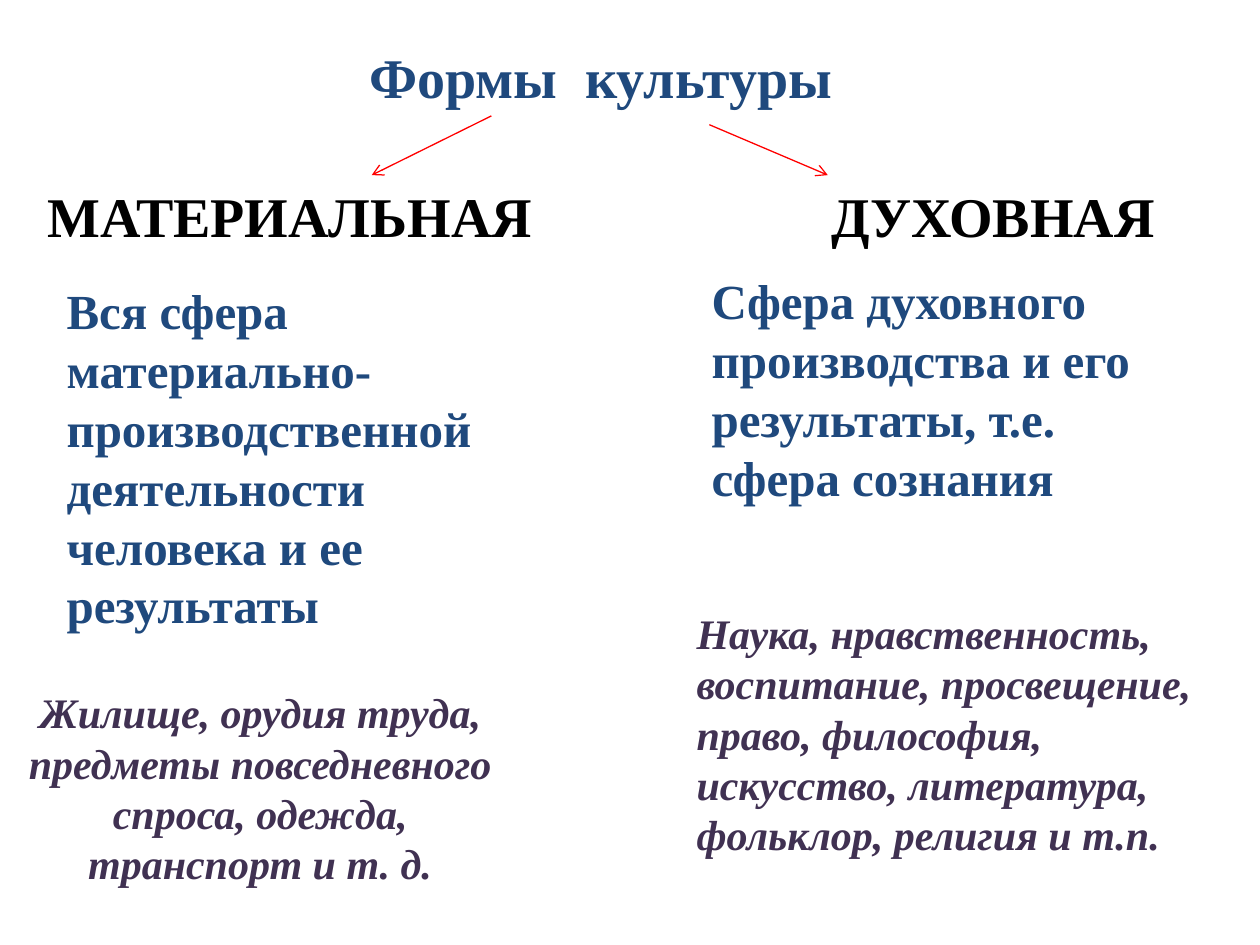
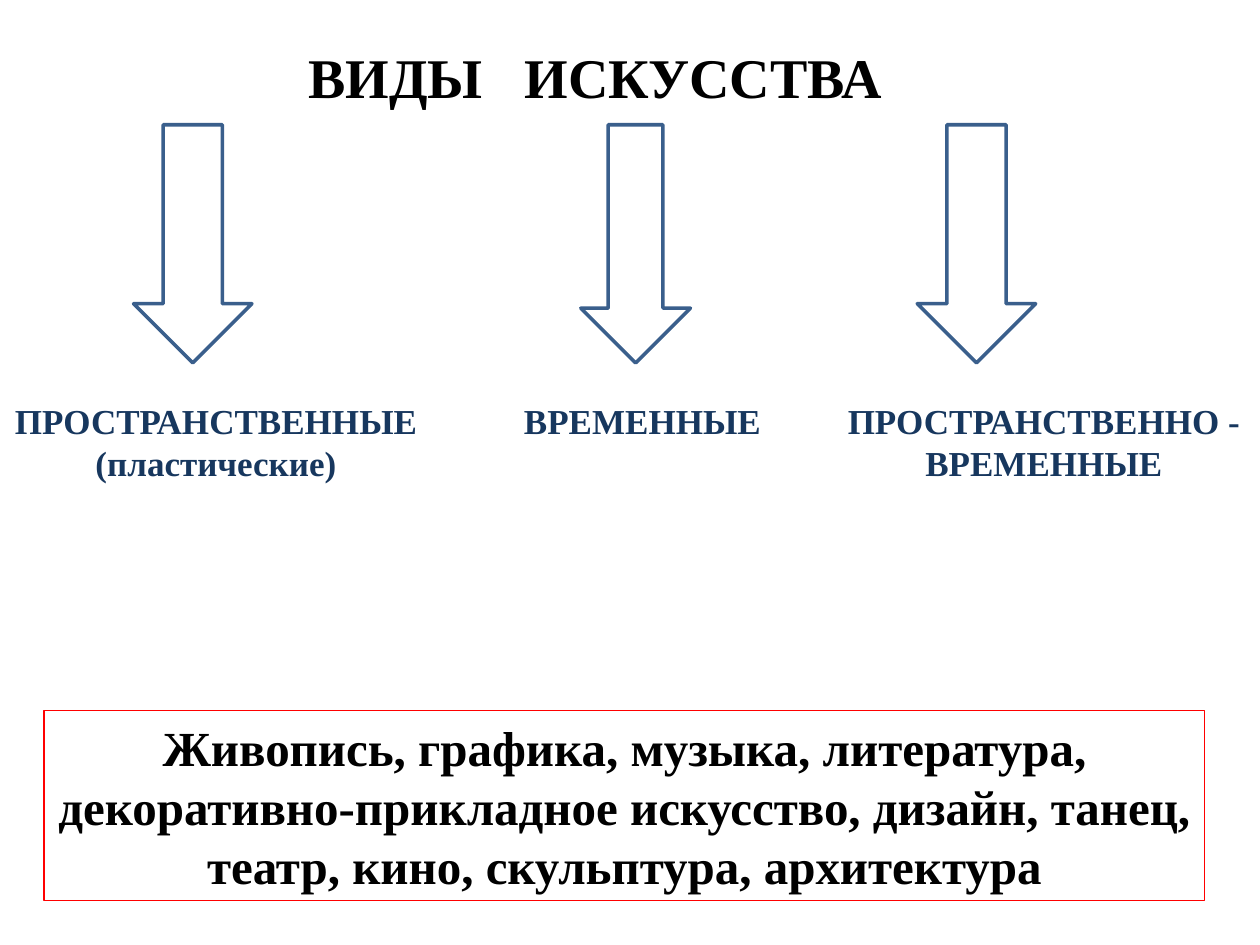
import pptx
import pptx.dml.color
import pptx.enum.shapes
import pptx.enum.text
import pptx.oxml.ns
import pptx.util
from lxml import etree

Inches = pptx.util.Inches
MSO_SHAPE = pptx.enum.shapes.MSO_SHAPE
LEFT = pptx.enum.text.PP_ALIGN.LEFT
CENTER = pptx.enum.text.PP_ALIGN.CENTER

FONT = "Times New Roman"
BLACK = "000000"
WHITE = "FFFFFF"
RED = "FF0000"
BLUE = "1F497D"
NAVY = "17375E"
PURPLE = "403152"
ARROW_BLUE = "3A5F8C"

TITLE_SIZE = 32
BODY_SIZE = 28
EXAMPLE_SIZE = 24
LABEL_SIZE = 20


def color(hex_code):
    return pptx.dml.color.RGBColor.from_string(hex_code)


def set_line(line, hex_code, width):
    line.color.rgb = color(hex_code)
    line.width = pptx.util.Pt(width)


def write_text(shape, text, size, hex_code, alignment, italic=False):
    text_frame = shape.text_frame
    text_frame.word_wrap = True
    text_frame.text = text
    paragraph = text_frame.paragraphs[0]
    paragraph.alignment = alignment
    font = paragraph.runs[0].font
    font.name = FONT
    font.size = pptx.util.Pt(size)
    font.bold = True
    font.italic = italic
    font.color.rgb = color(hex_code)


def add_text(slide, box, text, size, hex_code, alignment=LEFT, italic=False):
    shape = slide.shapes.add_textbox(*map(Inches, box))
    write_text(shape, text, size, hex_code, alignment, italic)


def add_title(slide, left, width, text, hex_code):
    add_text(slide, (left, 0.29, width, 0.64), text, TITLE_SIZE, hex_code, CENTER)


def add_shape(slide, kind, box, line_color, line_width):
    shape = slide.shapes.add_shape(kind, *map(Inches, box))
    shape.shadow.inherit = False
    shape.fill.solid()
    shape.fill.fore_color.rgb = color(WHITE)
    set_line(shape.line, line_color, line_width)
    return shape


def add_branch_arrow(slide, start, end):
    connector = slide.shapes.add_connector(
        pptx.enum.shapes.MSO_CONNECTOR.STRAIGHT, *map(Inches, start + end))
    set_line(connector.line, RED, 0.75)
    qualified = pptx.oxml.ns.qn
    etree.SubElement(connector.line._get_or_add_ln(), qualified("a:tailEnd"), type="arrow")
    etree.SubElement(connector._element.spPr, qualified("a:effectLst"))


def add_culture_form(slide, heading, definition, examples, examples_alignment):
    heading_box, heading_text = heading
    definition_box, definition_text = definition
    examples_box, examples_text = examples
    add_text(slide, heading_box, heading_text, TITLE_SIZE, BLACK)
    add_text(slide, definition_box, definition_text, BODY_SIZE, BLUE)
    add_text(slide, examples_box, examples_text, EXAMPLE_SIZE, PURPLE,
             examples_alignment, italic=True)


def build_culture_forms(slide):
    add_title(slide, 2.8, 3.94, "Формы  культуры", BLUE)
    add_culture_form(
        slide,
        ((0.28, 1.39, 4.25, 0.64), "МАТЕРИАЛЬНАЯ"),
        ((0.43, 2.18, 3.78, 2.93),
         "Вся сфера материально-производственной деятельности человека и ее результаты"),
        ((0, 5.4, 4.13, 1.72),
         "Жилище, орудия труда, предметы повседневного спроса, одежда, транспорт и т. д."),
        CENTER)
    add_culture_form(
        slide,
        ((6.5, 1.39, 3.07, 0.64), "ДУХОВНАЯ"),
        ((5.55, 2.1, 3.62, 1.99),
         "Сфера духовного производства и его результаты, т.е. сфера сознания"),
        ((5.43, 4.77, 4.57, 2.12),
         "Наука, нравственность, воспитание, просвещение, право, философия, "
         "искусство, литература, фольклор, религия и т.п."),
        LEFT)
    add_branch_arrow(slide, (3.9, 0.92), (2.95, 1.39))
    add_branch_arrow(slide, (5.63, 0.99), (6.57, 1.39))


def build_art_kinds(slide):
    add_title(slide, 1.14, 7.17, "ВИДЫ   ИСКУССТВА", BLACK)
    for left, width in ((1.06, 0.94), (4.61, 0.87), (7.28, 0.94)):
        add_shape(slide, MSO_SHAPE.DOWN_ARROW, (left, 0.99, width, 1.89), ARROW_BLUE, 2)
    art_kinds = (
        (0, 3.43, 0.77, "ПРОСТРАНСТВЕННЫЕ (пластические)", CENTER),
        (4.06, 2.6, 0.44, "ВРЕМЕННЫЕ", LEFT),
        (6.57, 3.43, 0.77, "ПРОСТРАНСТВЕННО - ВРЕМЕННЫЕ", CENTER),
    )
    for left, width, height, name, alignment in art_kinds:
        add_text(slide, (left, 3.12, width, height), name, LABEL_SIZE, NAVY, alignment)
    arts_frame = add_shape(slide, MSO_SHAPE.RECTANGLE, (0.35, 5.64, 9.21, 1.51), RED, 0.75)
    arts_frame.fill.background()
    write_text(
        arts_frame,
        "Живопись, графика, музыка, литература, декоративно-прикладное искусство, "
        "дизайн, танец, театр, кино, скульптура, архитектура",
        BODY_SIZE, BLACK, CENTER)


def main():
    presentation = pptx.Presentation()
    presentation.slide_width = Inches(10)
    presentation.slide_height = Inches(7.5)
    blank_layout = presentation.slide_layouts[6]
    for build in (build_culture_forms, build_art_kinds):
        build(presentation.slides.add_slide(blank_layout))
    presentation.save("out.pptx")


if __name__ == "__main__":
    main()
